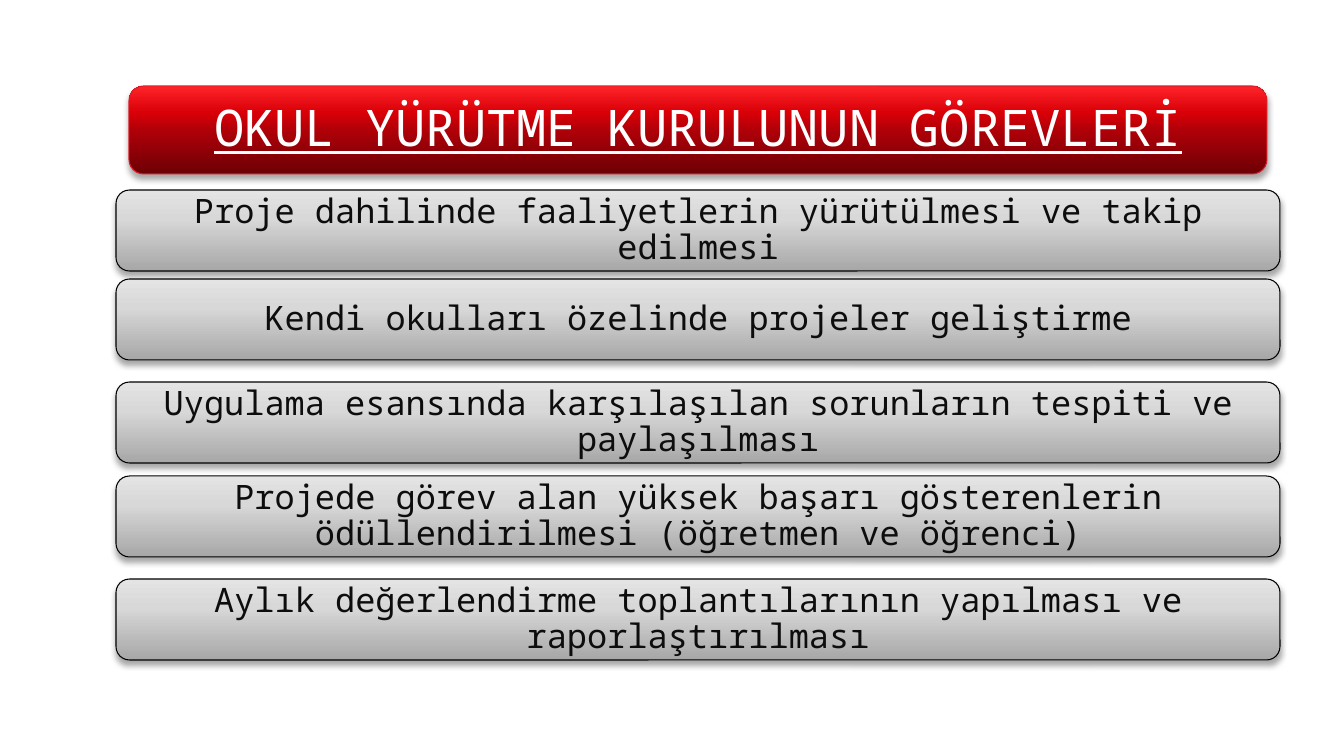
from lxml import etree
from pptx import Presentation
from pptx.dml.color import RGBColor
from pptx.enum.shapes import MSO_SHAPE
from pptx.enum.text import MSO_ANCHOR, PP_ALIGN
from pptx.oxml.ns import qn
from pptx.util import Emu, Pt

ROUND = MSO_SHAPE.ROUNDED_RECTANGLE
MIDDLE = MSO_ANCHOR.MIDDLE
CENTER = PP_ALIGN.CENTER

TITLE = "OKUL YÜRÜTME KURULUNUN GÖREVLERİ"
DUTIES = [
    (190, "Proje dahilinde faaliyetlerin yürütülmesi ve takip edilmesi"),
    (279, "Kendi okulları özelinde projeler geliştirme"),
    (382, "Uygulama esansında karşılaşılan sorunların tespiti ve paylaşılması"),
    (476, "Projede görev alan yüksek başarı gösterenlerin ödüllendirilmesi (öğretmen ve öğrenci)"),
    (579, "Aylık değerlendirme toplantılarının yapılması ve raporlaştırılması"),
]
RED = {
    "stops": [(0, "6D0005"), (50, "B00008"), (70, "DA0008"), (100, "FF2429")],
    "line": "DA1F28", "ink": "FFFFFF", "size": 36, "inset": 15, "under": True,
}
GRAY = {
    "stops": [(0, "A7A7A7"), (65, "D8D8D8"), (100, "E4E4E4")],
    "line": "000000", "ink": "0D0D0D", "size": 24, "inset": 10, "under": False,
}
FONT = "Noto Sans Mono"


def px(n):
    return Emu(round(n * 914400 / 100.8))


def color(code):
    return RGBColor.from_string(code)


def node(parent, tag, **attrs):
    return etree.SubElement(parent, qn(tag), {k: str(v) for k, v in attrs.items()})


def shade(bar, stops):
    bar.fill.gradient()
    bar.fill.gradient_angle = 90
    ramp = bar._element.spPr.find(qn("a:gradFill")).find(qn("a:gsLst"))
    for old in list(ramp):
        ramp.remove(old)
    for at, code in stops:
        stop = node(ramp, "a:gs", pos=at * 1000)
        node(stop, "a:srgbClr", val=code)


def shadow(bar):
    bar.shadow.inherit = False
    glow = bar._element.spPr.find(qn("a:effectLst"))
    drop = node(glow, "a:outerShdw", blurRad=Pt(4), dist=Pt(3), dir=5400000, rotWithShape=0)
    tint = node(drop, "a:srgbClr", val="000000")
    node(tint, "a:alpha", val=35000)


def add_bar(slide, box, text, look):
    bar = slide.shapes.add_shape(ROUND, *map(px, box))
    shade(bar, look["stops"])
    bar.line.color.rgb = color(look["line"])
    bar.line.width = Pt(0.75)
    shadow(bar)
    frame = bar.text_frame
    frame.word_wrap = True
    frame.vertical_anchor = MIDDLE
    inset = px(look["inset"])
    frame.margin_left = frame.margin_right = inset
    frame.margin_top = frame.margin_bottom = inset
    frame.text = text
    para = frame.paragraphs[0]
    para.alignment = CENTER
    para.line_spacing = 0.9
    font = para.runs[0].font
    font.name = FONT
    font.size = Pt(look["size"])
    font.color.rgb = color(look["ink"])
    if look["under"]:
        font.underline = True


def main():
    deck = Presentation()
    deck.slide_width, deck.slide_height = px(1344), px(756)
    slide = deck.slides.add_slide(deck.slide_layouts[6])
    add_bar(slide, (129, 86, 1138, 88), TITLE, RED)
    for top, duty in DUTIES:
        add_bar(slide, (116, top, 1164, 81), duty, GRAY)
    deck.save("out.pptx")


if __name__ == "__main__":
    main()
